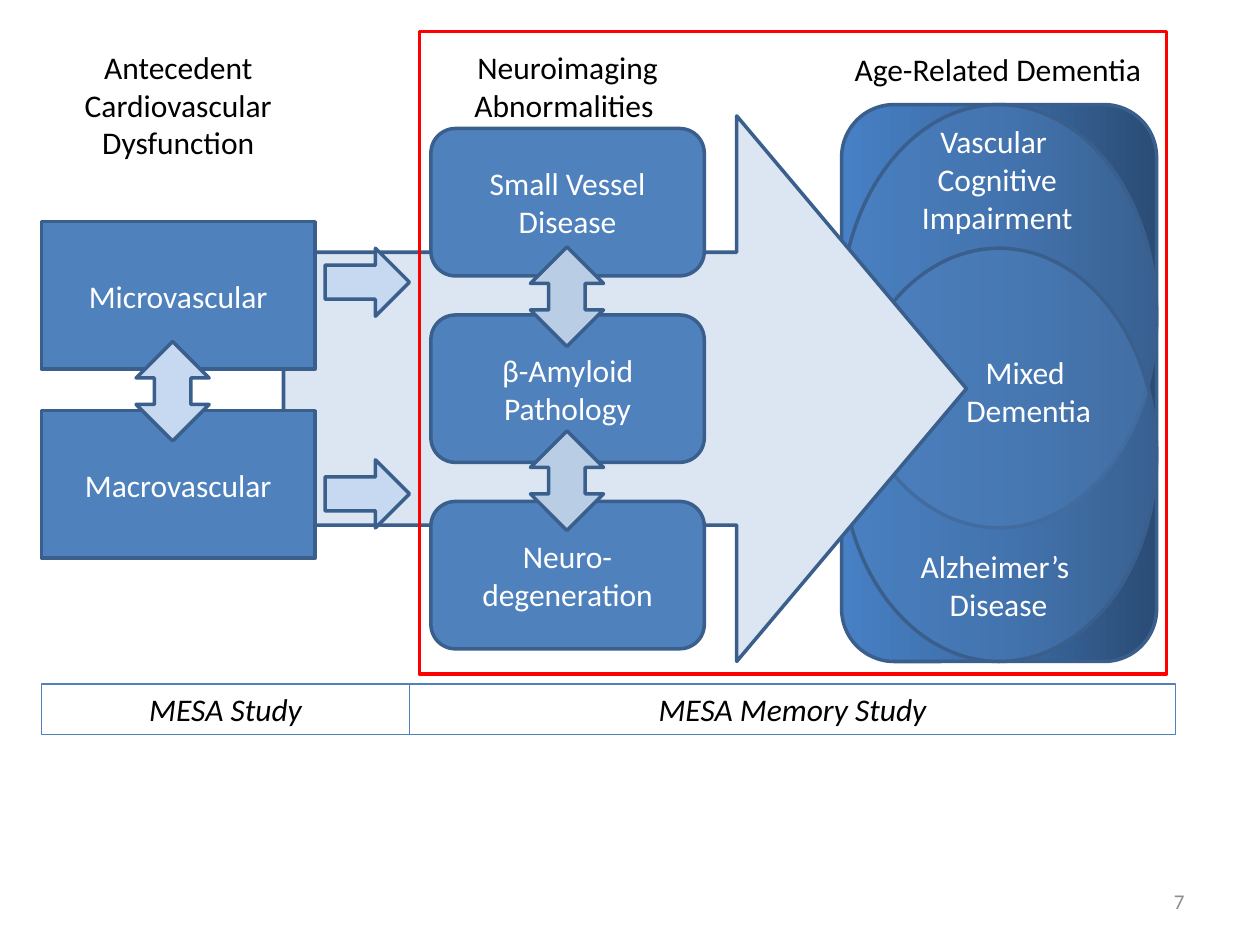
import copy
import pptx
import pptx.dml.color
import pptx.enum.shapes
import pptx.enum.text
import pptx.oxml.ns
import pptx.util
from lxml import etree

Inches = pptx.util.Inches
SHAPE = pptx.enum.shapes.MSO_SHAPE
ANCHOR = pptx.enum.text.MSO_ANCHOR
ALIGN = pptx.enum.text.PP_ALIGN
FIT = pptx.enum.text.MSO_AUTO_SIZE
qn = pptx.oxml.ns.qn

BLUE, EDGE, WHITE, BLACK = "4F81BD", "3A5F8C", "FFFFFF", "000000"
BOX_W, BOX_H = 2.17, 1.17
LEFT, MIDDLE = 0.33, 3.42


def rgb(value):
    return pptx.dml.color.RGBColor.from_string(value)


def write(sp, lines, color=WHITE, size=18, align=ALIGN.CENTER, italic=None,
          anchor=ANCHOR.MIDDLE, fit=FIT.NONE):
    tf = sp.text_frame
    frame = {"word_wrap": True, "vertical_anchor": anchor, "auto_size": fit}
    for name, value in frame.items():
        setattr(tf, name, value)
    font = {"name": "Calibri", "size": pptx.util.Pt(size), "italic": italic}
    for i, line in enumerate(lines):
        p = tf.paragraphs[0] if i == 0 else tf.add_paragraph()
        p.alignment = align
        r = p.add_run()
        r.text = line
        for name, value in font.items():
            setattr(r.font, name, value)
        r.font.color.rgb = rgb(color)


def add_shape(s, kind, box, fill=BLUE, line=EDGE, width=2):
    sp = s.shapes.add_shape(kind, *map(Inches, box))
    sp.shadow.inherit = False
    if fill:
        sp.fill.solid()
        sp.fill.fore_color.rgb = rgb(fill)
    else:
        sp.fill.background()
    sp.line.color.rgb = rgb(line)
    sp.line.width = pptx.util.Pt(width)
    return sp


def add_label(s, box, lines, color=BLACK, **format_values):
    sp = s.shapes.add_textbox(*map(Inches, box))
    values = {"anchor": ANCHOR.TOP, "fit": FIT.SHAPE_TO_FIT_TEXT, **format_values}
    write(sp, lines, color, **values)


def add_oval(s, box):
    sp = add_shape(s, SHAPE.OVAL, box)
    color = sp._element.spPr.find(qn("a:solidFill"))[0]
    etree.SubElement(color, qn("a:alpha")).set("val", "40000")


def add_gradient_panel(s, box, colors):
    sp = add_shape(s, SHAPE.ROUNDED_RECTANGLE, box)
    sp.fill.gradient()
    sp.fill.gradient_angle = 180
    stops = sp._element.spPr.find(".//" + qn("a:gsLst"))
    stops.insert(1, copy.deepcopy(stops[0]))
    for i, (stop, color) in enumerate(zip(sp.fill.gradient_stops, colors)):
        stop.position = i / (len(colors) - 1)
        stop.color.rgb = rgb(color)


def add_dementia_panel(s):
    add_gradient_panel(s, (6.68, 0.83, 2.5, 4.42), ["2A4C75", "3C6CA6", "4780C5"])
    add_oval(s, (6.67, 0.83, 2.51, 3.36))
    add_oval(s, (6.68, 1.97, 2.5, 3.28))


def add_flow(s):
    sp = add_shape(s, SHAPE.RIGHT_ARROW, (2.25, 0.92, 5.42, 4.33), "DCE6F2")
    sp.adjustments[1] = 0.421
    for i, name in enumerate(["Microvascular", "Macrovascular"]):
        write(add_shape(s, SHAPE.RECTANGLE, (LEFT, 1.76 + 1.5 * i, BOX_W, BOX_H)), [name])
    add_shape(s, SHAPE.UP_DOWN_ARROW, (1.08, 2.71, 0.58, 0.79), "C6D9F1")
    for top in (1.97, 3.65):
        add_shape(s, SHAPE.RIGHT_ARROW, (2.58, top, 0.67, 0.54), "C6D9F1")
    names = ["Small Vessel Disease", "β-Amyloid Pathology", "Neuro-degeneration"]
    for i, name in enumerate(names):
        box = (MIDDLE, 1.02 + 1.48 * i, BOX_W, BOX_H)
        write(add_shape(s, SHAPE.ROUNDED_RECTANGLE, box), [name])
    for top in (1.96, 3.42):
        add_shape(s, SHAPE.UP_DOWN_ARROW, (4.21, top, 0.58, 0.79), "B9CDE5")


def add_labels(s):
    add_label(s, (LEFT, 0.33, BOX_W, 1.01), ["Antecedent", "Cardiovascular Dysfunction"])
    add_label(s, (MIDDLE, 0.33, BOX_W, 0.71), ["Neuroimaging Abnormalities "])
    add_label(s, (6.67, 0.35, 2.5, 0.4), ["Age-Related Dementia"])
    add_label(s, (6.67, 4.29, 2.51, 0.71), ["Alzheimer’s ", "Disease"], WHITE)
    add_label(s, (6.75, 0.92, 2.33, 1.01), ["Vascular ", "Cognitive Impairment"], WHITE)
    add_label(s, (6.91, 2.75, 2.51, 0.71), ["Mixed ", "Dementia"], WHITE)
    add_label(s, (7.17, 6.95, 2.33, 0.4), ["7"], "8C8C8C", size=12,
              align=ALIGN.RIGHT, anchor=ANCHOR.MIDDLE, fit=FIT.NONE)


def add_study_bar(s):
    left = LEFT
    for name, width in [("MESA Study", 2.92), ("MESA Memory Study", 6.08)]:
        sp = add_shape(s, SHAPE.RECTANGLE, (left, 5.43, width, 0.4), WHITE, BLUE, 0.75)
        write(sp, [name], BLACK, italic=True, anchor=ANCHOR.TOP,
              fit=FIT.SHAPE_TO_FIT_TEXT)
        left += width


def main():
    prs = pptx.Presentation()
    prs.slide_width, prs.slide_height = Inches(10), Inches(7.5)
    s = prs.slides.add_slide(prs.slide_layouts[6])
    add_dementia_panel(s)
    add_flow(s)
    add_study_bar(s)
    add_labels(s)
    add_shape(s, SHAPE.RECTANGLE, (3.33, 0.25, 5.93, 5.1), None, "FF0000")
    prs.save("out.pptx")


if __name__ == "__main__":
    main()
